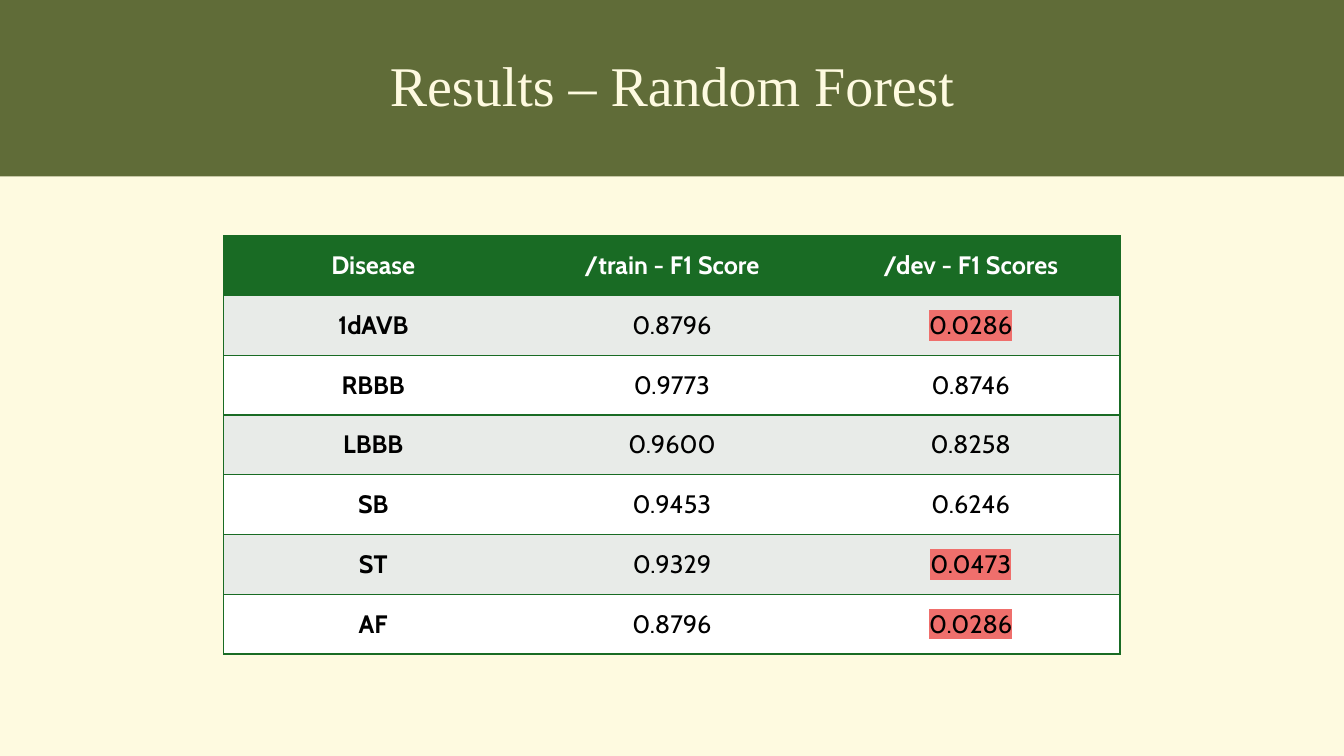
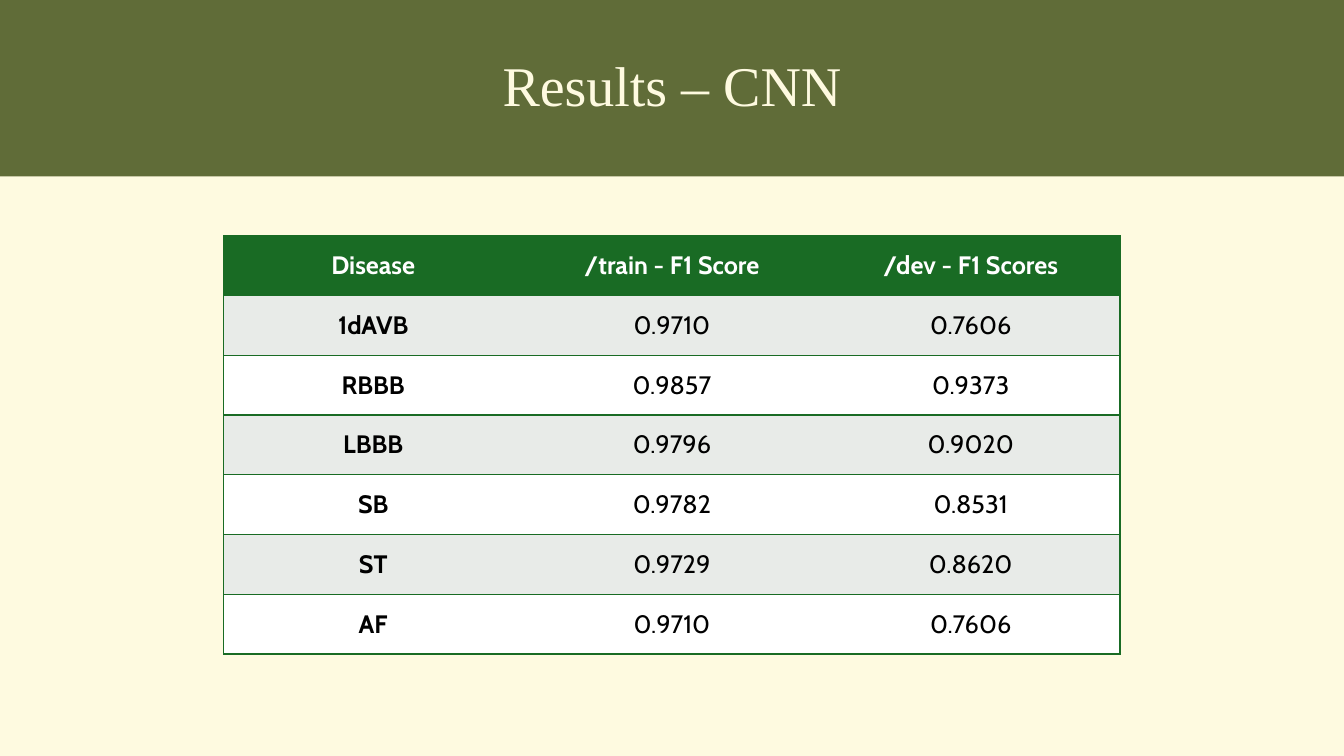
"""Build two slides of F1 scores per disease, one for each classifier."""
from dataclasses import dataclass

from lxml.etree import SubElement
from pptx import Presentation
from pptx.dml.color import RGBColor
from pptx.enum.text import MSO_ANCHOR, MSO_AUTO_SIZE, PP_ALIGN
from pptx.oxml.ns import qn
from pptx.util import Inches, Pt


@dataclass(frozen=True)
class Theme:
    cream: str = "FEFAE0"
    olive: str = "606C38"
    green: str = "196B24"
    band: str = "E8EBE8"
    white: str = "FFFFFF"
    black: str = "000000"
    alert: str = "EF6F6C"
    title_font: str = "Times New Roman"
    table_font: str = "Cabin"
    title_size: int = 40
    table_size: int = 18
    border_width: int = 1


THEME = Theme()
WEAK_SCORE = 0.5
HEADINGS = ["Disease", "/train - F1 Score", "/dev - F1 Scores"]
DISEASES = ["1dAVB", "RBBB", "LBBB", "SB", "ST", "AF"]
RESULTS = {
    "Random Forest": {
        "train": [0.8796, 0.9773, 0.9600, 0.9453, 0.9329, 0.8796],
        "dev": [0.0286, 0.8746, 0.8258, 0.6246, 0.0473, 0.0286],
    },
    "CNN": {
        "train": [0.9710, 0.9857, 0.9796, 0.9782, 0.9729, 0.9710],
        "dev": [0.7606, 0.9373, 0.9020, 0.8531, 0.8620, 0.7606],
    },
}


def style_text(paragraph, font_name, size, color, bold=False):
    paragraph.alignment = PP_ALIGN.CENTER
    font = paragraph.runs[0].font
    font.name, font.size, font.bold = font_name, Pt(size), bold
    font.color.rgb = RGBColor.from_string(color)


def add_border(cell, side, visible):
    line = SubElement(cell._tc.get_or_add_tcPr(), qn(f"a:ln{side}"), w=str(Pt(THEME.border_width)))
    if visible:
        SubElement(SubElement(line, qn("a:solidFill")), qn("a:srgbClr"), val=THEME.green)
    else:
        SubElement(line, qn("a:noFill"))


prs = Presentation()
prs.slide_width, prs.slide_height = Inches(13.33), Inches(7.5)
background = prs.slide_master.background.fill
background.solid()
background.fore_color.rgb = RGBColor.from_string(THEME.cream)
title_only = prs.slide_layouts[5]

for model, scores in RESULTS.items():
    slide = prs.slides.add_slide(title_only)

    title = slide.shapes.title
    title.left, title.top = Inches(0), Inches(0)
    title.width, title.height = prs.slide_width, Inches(1.75)
    title.fill.solid()
    title.fill.fore_color.rgb = RGBColor.from_string(THEME.olive)
    title.text_frame.text = f"Results – {model}"
    title.text_frame.auto_size = MSO_AUTO_SIZE.NONE
    title.text_frame.vertical_anchor = MSO_ANCHOR.MIDDLE
    heading = title.text_frame.paragraphs[0]
    heading.line_spacing, heading.space_before = 0.9, Pt(10)
    style_text(heading, THEME.title_font, THEME.title_size, THEME.cream)

    rows = [HEADINGS, *zip(DISEASES, scores["train"], scores["dev"])]
    last_column = len(HEADINGS) - 1
    score_table = slide.shapes.add_table(
        len(rows), len(HEADINGS), Inches(2.22), Inches(2.34), Inches(8.89), Inches(4.15)
    ).table

    for row_index, row in enumerate(rows):
        is_header = row_index == 0
        if is_header:
            row_fill = THEME.green
        else:
            row_fill = THEME.band if row_index % 2 else THEME.white

        for column, value in enumerate(row):
            cell = score_table.cell(row_index, column)
            add_border(cell, "L", column == 0)
            add_border(cell, "R", column == last_column)
            add_border(cell, "T", True)
            add_border(cell, "B", True)
            cell.fill.solid()
            cell.fill.fore_color.rgb = RGBColor.from_string(row_fill)
            cell.vertical_anchor = MSO_ANCHOR.MIDDLE

            is_score = isinstance(value, float)
            cell.text_frame.text = f"{value:.4f}" if is_score else value
            entry = cell.text_frame.paragraphs[0]
            text_color = THEME.white if is_header else THEME.black
            style_text(entry, THEME.table_font, THEME.table_size, text_color, bold=not is_score)

            if is_score and value < WEAK_SCORE:
                run_properties = entry.runs[0].font._element
                highlight = SubElement(run_properties, qn("a:highlight"))
                SubElement(highlight, qn("a:srgbClr"), val=THEME.alert)
                run_properties.find(qn("a:latin")).addprevious(highlight)

prs.save("out.pptx")
